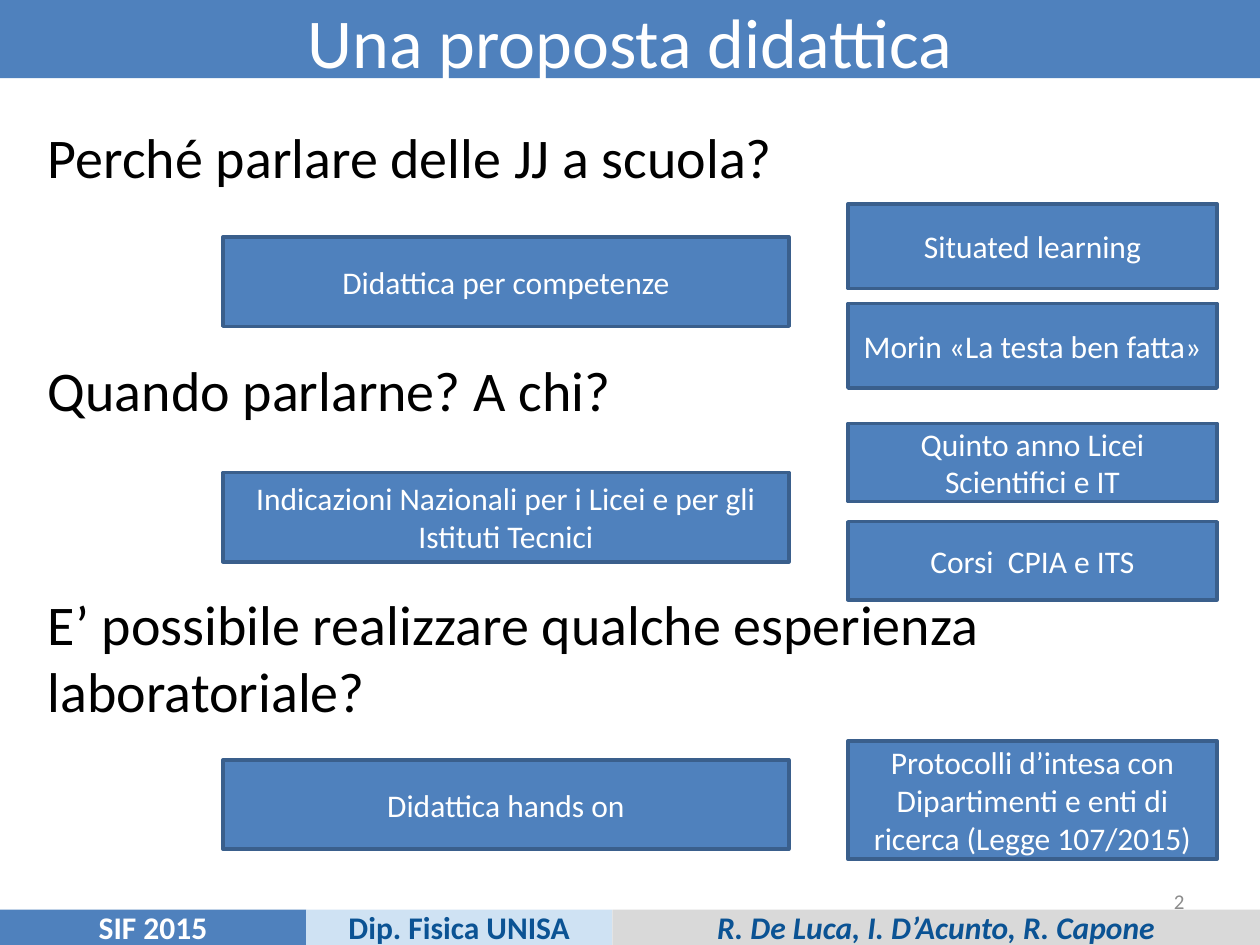
import pptx
import pptx.util
import pptx.dml.color
import pptx.enum.shapes
import pptx.enum.text
import lxml.etree
from dataclasses import dataclass

Inches, Pt = pptx.util.Inches, pptx.util.Pt
Align = pptx.enum.text.PP_ALIGN
Anchor = pptx.enum.text.MSO_ANCHOR


@dataclass(frozen=True)
class Theme:
    font: str = "Calibri"
    blue: str = "4F81BD"
    edge: str = "3A5F8C"
    pale: str = "CFE2F3"
    gray: str = "D9D9D9"
    navy: str = "0B5394"
    white: str = "FFFFFF"
    black: str = "000000"
    dim: str = "8C8C8C"
    title: int = 40
    body: int = 32
    label: int = 18
    small: int = 12


T = Theme()

TITLE = "Una proposta didattica"
ASKS = [
    "Perché parlare delle JJ a scuola?",
    "Quando parlarne? A chi?",
    "E’ possibile realizzare qualche esperienza laboratoriale?",
]
GAP = 95  # points between questions, leaving room for the boxes

# Each column: left, width, then (top, height, text) for each box
COLS = [
    (1.77, 4.49, [
        (1.88, 0.71, "Didattica per competenze"),
        (3.75, 0.71, "Indicazioni Nazionali per i Licei e per gli Istituti Tecnici"),
        (6.03, 0.71, "Didattica hands on"),
    ]),
    (6.73, 2.93, [
        (1.62, 0.67, "Situated learning"),
        (2.41, 0.67, "Morin «La testa ben fatta»"),
        (3.36, 0.62, "Quinto anno Licei Scientifici e IT"),
        (4.14, 0.62, "Corsi  CPIA e ITS"),
        (5.88, 0.94, "Protocolli d’intesa con Dipartimenti e enti di ricerca (Legge 107/2015)"),
    ]),
]

# Footer: width, text, fill, ink, italic
FOOT = [
    (2.43, "SIF 2015", T.blue, T.white, False),
    (2.43, "Dip. Fisica UNISA", T.pale, T.navy, False),
    (5.14, "R. De Luca, I. D’Acunto, R. Capone", T.gray, T.navy, True),
]
PAGE = "2"


def rgb(code):
    return pptx.dml.color.RGBColor.from_string(code)


def paint(shape, color):
    shape.fill.solid()
    shape.fill.fore_color.rgb = rgb(color)


def place(shape, left, top, width, height):
    shape.left, shape.top = Inches(left), Inches(top)
    shape.width, shape.height = Inches(width), Inches(height)


def pad(frame, side, end):
    frame.margin_left = frame.margin_right = Inches(side)
    frame.margin_top = frame.margin_bottom = Inches(end)


def write(para, text, size, color, align=Align.CENTER, bold=False, italic=False):
    para.alignment = align
    run = para.add_run()
    run.text = text
    font = run.font
    font.name, font.size = T.font, Pt(size)
    font.bold, font.italic = bold, italic
    font.color.rgb = rgb(color)


def add_box(slide, spot, fill, edge=None):
    """Add a flat rectangle and return its text frame."""
    kind = pptx.enum.shapes.MSO_SHAPE.RECTANGLE
    box = slide.shapes.add_shape(kind, *map(Inches, spot))
    box.shadow.inherit = False
    paint(box, fill)
    if edge:
        box.line.color.rgb = rgb(edge)
        box.line.width = Pt(2)
    else:
        box.line.fill.background()
    frame = box.text_frame
    frame.word_wrap = True
    frame.vertical_anchor = Anchor.MIDDLE
    return frame


def add_title(slide):
    title = slide.shapes.title
    place(title, 0, 0, 10, 0.62)
    paint(title, T.blue)
    frame = title.text_frame
    frame.auto_size = pptx.enum.text.MSO_AUTO_SIZE.NONE
    frame.vertical_anchor = Anchor.TOP
    pad(frame, 0.09, 0.04)
    para = frame.paragraphs[0]
    para.line_spacing = 0.95
    write(para, TITLE, T.title, T.white)


def add_asks(slide):
    body = slide.placeholders[1]
    place(body, 0.28, 0.92, 9.53, 5.75)
    frame = body.text_frame
    frame.auto_size = pptx.enum.text.MSO_AUTO_SIZE.NONE
    for i, ask in enumerate(ASKS):
        para = frame.add_paragraph() if i else frame.paragraphs[0]
        para.space_before = Pt(GAP if i else 0)
        write(para, ask, T.body, T.black, Align.LEFT)
        props = para._p.get_or_add_pPr()
        props.set("marL", "0")
        props.set("indent", "0")
        lxml.etree.SubElement(props, pptx.oxml.ns.qn("a:buNone"))


def add_foot(slide):
    left = 0
    for width, text, fill, ink, italic in FOOT:
        frame = add_box(slide, (left, 7.22, width, 0.28), fill)
        pad(frame, 0.09, 0.09)
        write(frame.paragraphs[0], text, T.label, ink, bold=True, italic=italic)
        left += width
    spot = map(Inches, (7.17, 6.95, 2.33, 0.4))
    frame = slide.shapes.add_textbox(*spot).text_frame
    frame.word_wrap = True
    frame.vertical_anchor = Anchor.MIDDLE
    write(frame.paragraphs[0], PAGE, T.small, T.dim, Align.RIGHT)


def main():
    deck = pptx.Presentation()
    deck.slide_width, deck.slide_height = Inches(10), Inches(7.5)
    slide = deck.slides.add_slide(deck.slide_layouts[1])
    add_title(slide)
    add_asks(slide)
    for left, width, boxes in COLS:
        for top, height, text in boxes:
            frame = add_box(slide, (left, top, width, height), T.blue, T.edge)
            write(frame.paragraphs[0], text, T.label, T.white)
    add_foot(slide)
    deck.save("out.pptx")


if __name__ == "__main__":
    main()
